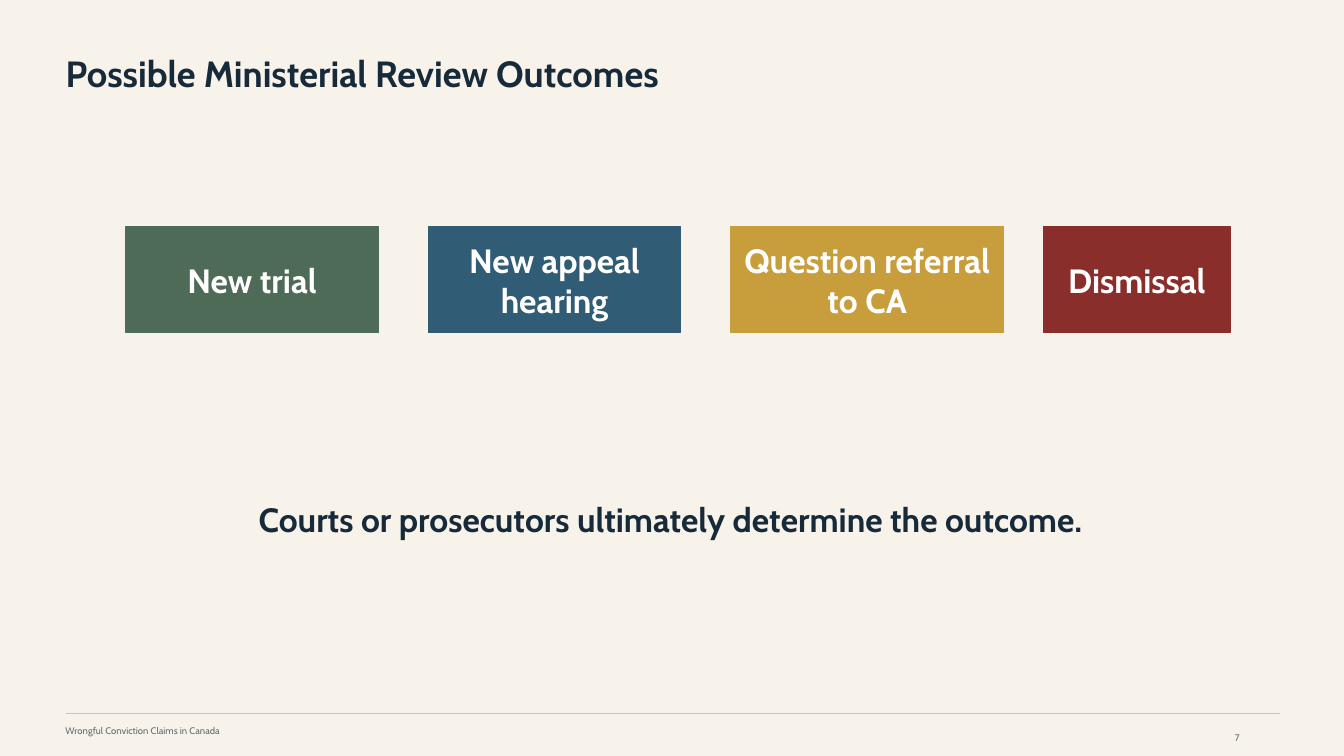
from dataclasses import dataclass

from lxml import etree
from pptx import Presentation
from pptx.dml.color import RGBColor
from pptx.enum.shapes import MSO_CONNECTOR, MSO_SHAPE
from pptx.enum.text import MSO_ANCHOR, MSO_AUTO_SIZE, PP_ALIGN
from pptx.oxml.ns import qn
from pptx.util import Inches, Pt

RECT = MSO_SHAPE.RECTANGLE
STRAIGHT = MSO_CONNECTOR.STRAIGHT
MIDDLE = MSO_ANCHOR.MIDDLE
NO_FIT = MSO_AUTO_SIZE.NONE
LEFT, CENTER = PP_ALIGN.LEFT, PP_ALIGN.CENTER
TITLE_ONLY = 5


@dataclass(frozen=True)
class Theme:
    font: str = "Cabin"
    paper: str = "F7F2EA"
    ink: str = "172A3A"
    muted: str = "5F6B70"
    rule: str = "D7C49E"
    white: str = "FFFFFF"
    green: str = "4E6B58"
    blue: str = "315C75"
    gold: str = "C89D3C"
    red: str = "8A2E2C"
    title_size: float = 26
    body_size: float = 24
    small_size: float = 6.8


THEME = Theme()
MARGIN = 13  # left margin, in grid columns
BOX_ROW, BOX_ROWS = 45, 21
OUTCOMES = [  # text, first column, columns, colour
    ("New trial", 25, 50, THEME.green),
    ("New appeal hearing", 85, 50, THEME.blue),
    ("Question referral to CA", 145, 54, THEME.gold),
    ("Dismissal", 207, 37, THEME.red),
]


def rgb(code):
    return RGBColor.from_string(code)


def grid(*cells):
    """Convert grid columns or rows, 20 to the inch, to lengths."""
    return [Inches(cell / 20) for cell in cells]


def write(sp, text, size, color, bold=False, align=LEFT, inset=0):
    tf = sp.text_frame
    tf.text = text
    tf.word_wrap = True
    tf.auto_size = NO_FIT
    tf.vertical_anchor = MIDDLE
    tf.margin_left = tf.margin_right = Inches(inset)
    tf.margin_top = tf.margin_bottom = Inches(inset / 2)
    p = tf.paragraphs[0]
    p.alignment = align
    p.font.name = THEME.font
    p.font.size = Pt(size)
    p.font.bold = bold
    p.font.color.rgb = rgb(color)


def add_title(s, text, left, top, width, height):
    sp = s.shapes.title
    sp.left, sp.top, sp.width, sp.height = grid(left, top, width, height)
    write(sp, text, THEME.title_size, THEME.ink, bold=True)


def add_text(s, text, cells, size, color, **style):
    write(s.shapes.add_textbox(*grid(*cells)), text, size, color, **style)


def add_outcome(s, text, column, columns, color):
    sp = s.shapes.add_shape(RECT, *grid(column, BOX_ROW, columns, BOX_ROWS))
    sp.shadow.inherit = False
    sp.fill.solid()
    sp.fill.fore_color.rgb = rgb(color)
    sp.line.color.rgb = rgb(color)
    sp.line.width = Pt(0.75)
    write(sp, text, THEME.body_size, THEME.white, bold=True, align=CENTER)


def add_rule(s, start, end, row):
    line = s.shapes.add_connector(STRAIGHT, *grid(start, row, end, row))
    line.line.color.rgb = rgb(THEME.rule)
    line.line.width = Pt(1)
    etree.SubElement(line._element.spPr, qn("a:effectLst"))


def main():
    prs = Presentation()
    prs.slide_width, prs.slide_height = Inches(13.33), Inches(7.5)
    s = prs.slides.add_slide(prs.slide_layouts[TITLE_ONLY])
    s.background.fill.solid()
    s.background.fill.fore_color.rgb = rgb(THEME.paper)

    add_rule(s, MARGIN, 254, 141.6)
    add_text(s, "Wrongful Conviction Claims in Canada", (MARGIN, 143, 116, 4),
             THEME.small_size, THEME.muted)
    add_title(s, "Possible Ministerial Review Outcomes", MARGIN, 9, 156, 11)
    for outcome in OUTCOMES:
        add_outcome(s, *outcome)
    add_text(s, "Courts or prosecutors ultimately determine the outcome.",
             (48, 93, 170, 20), THEME.body_size, THEME.ink,
             bold=True, align=CENTER)
    add_text(s, "7", (243, 143, 17.4, 6.6), THEME.small_size, THEME.muted,
             inset=0.1)
    prs.save("out.pptx")


if __name__ == "__main__":
    main()
